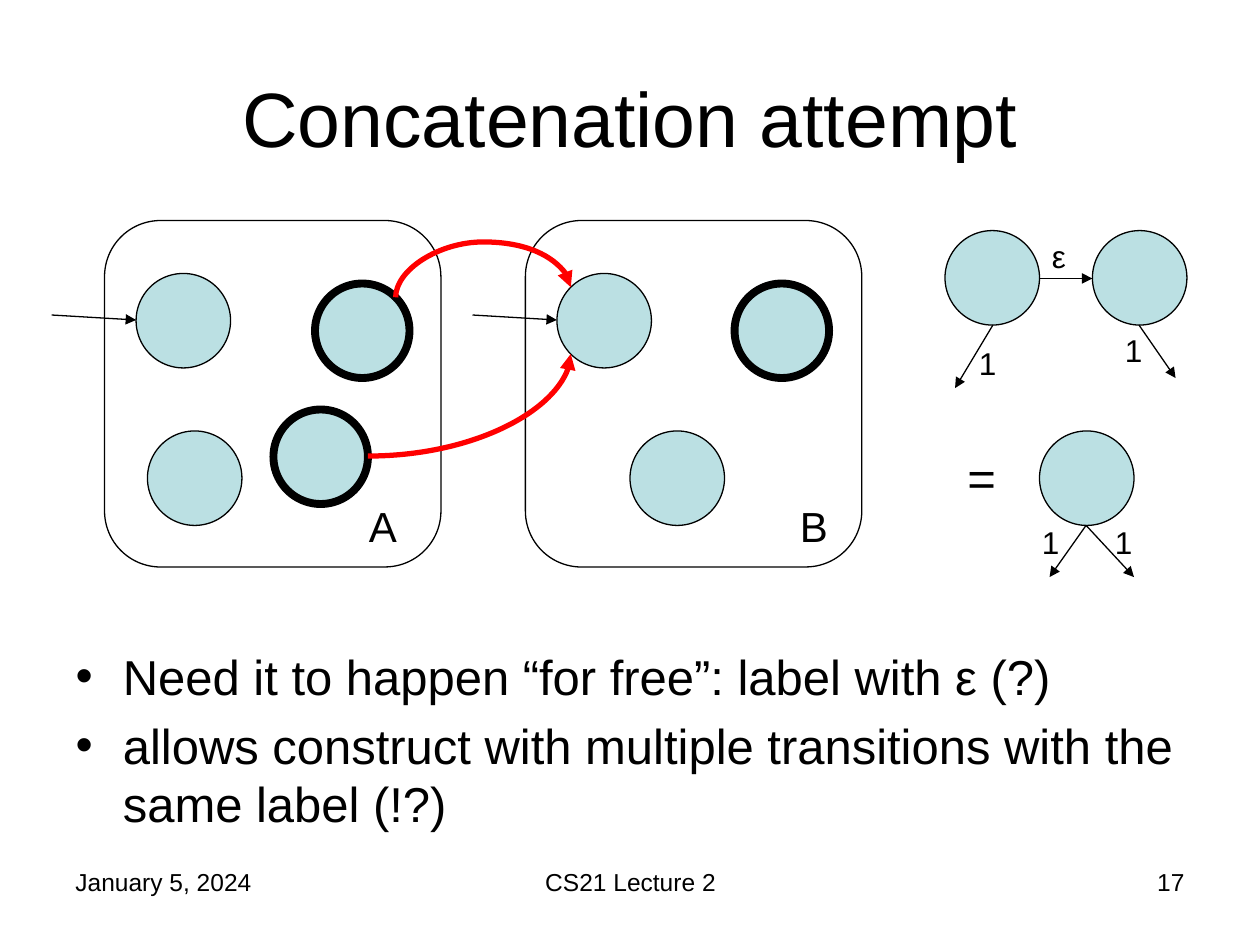
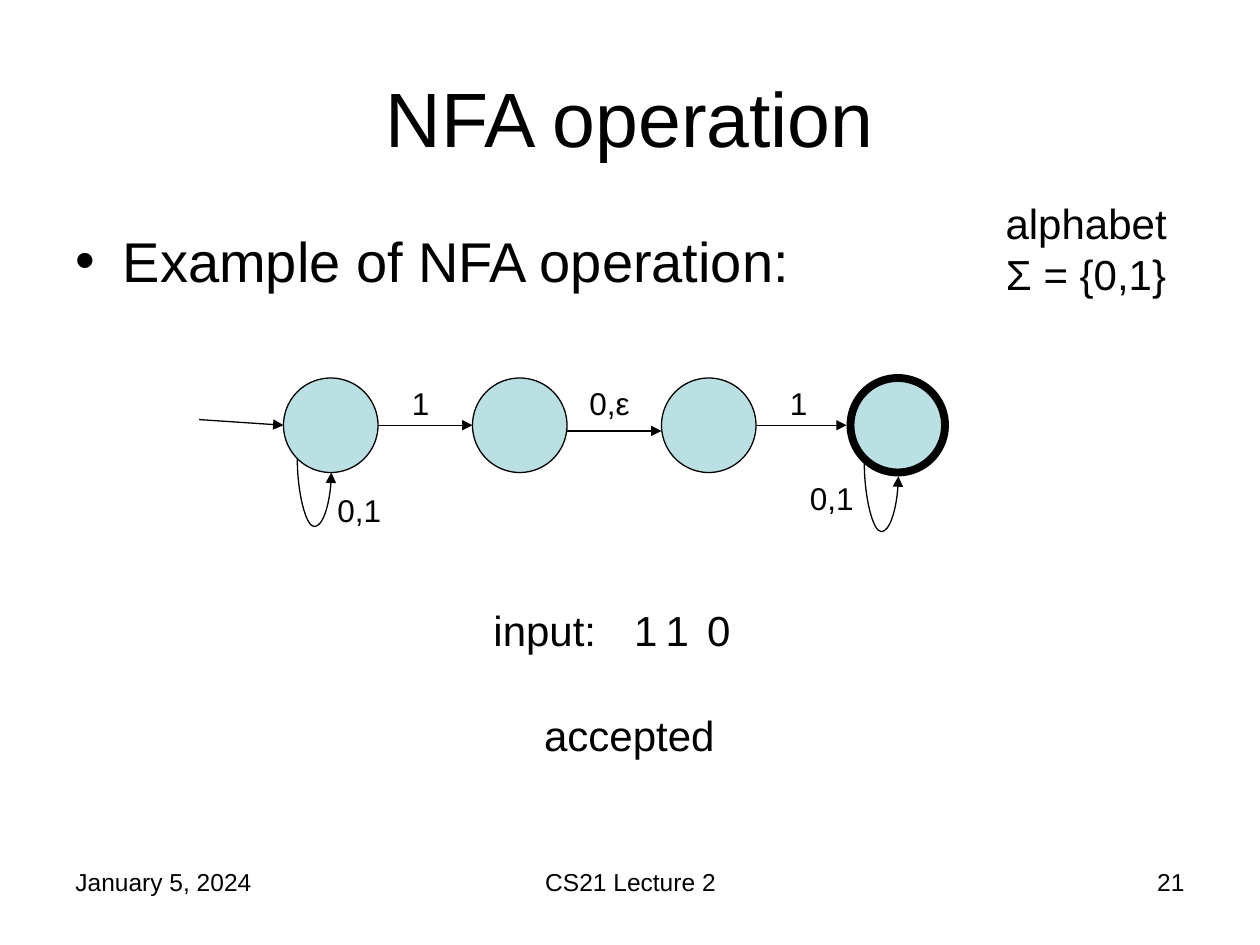
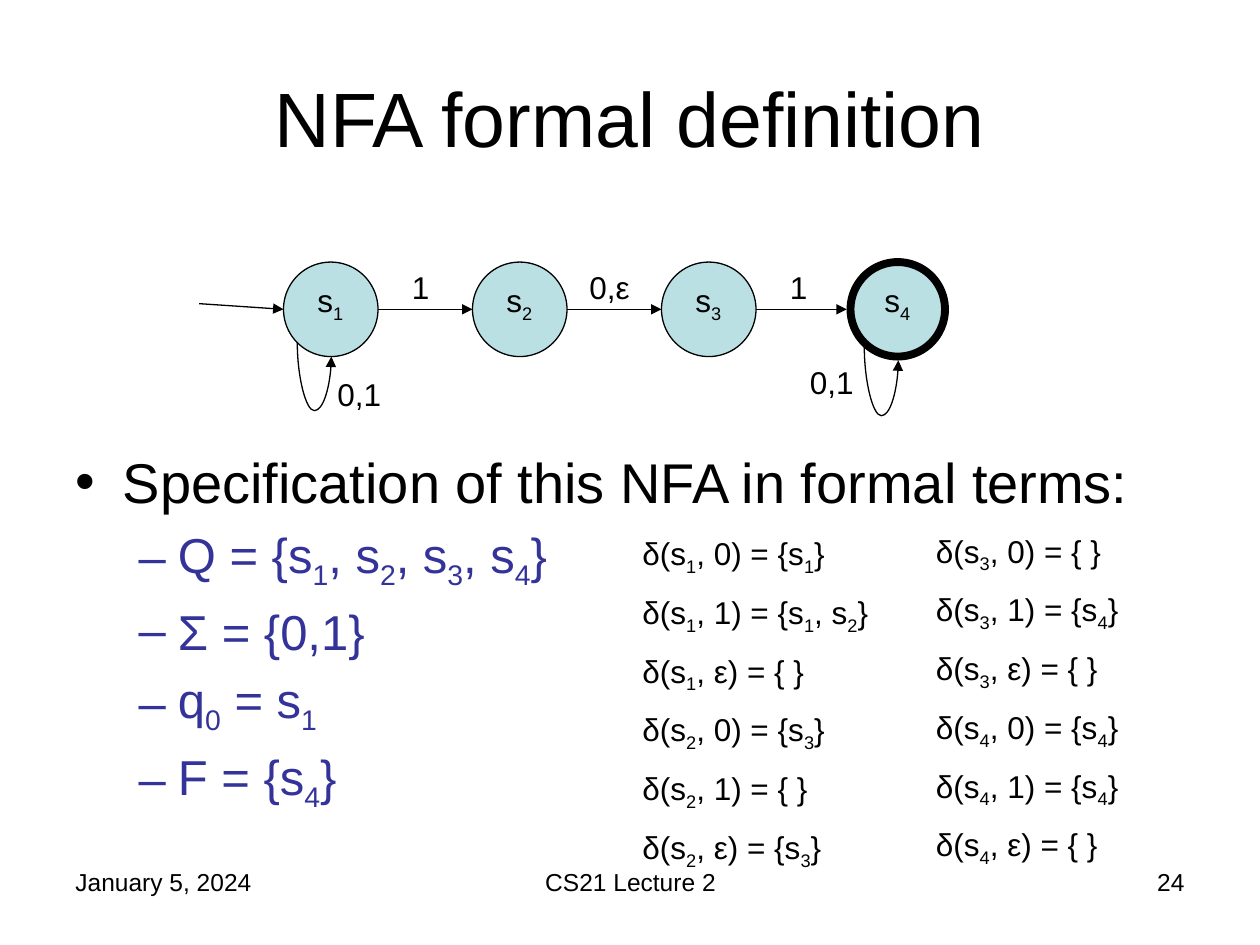
from lxml.etree import SubElement
from pptx import Presentation
from pptx.dml.color import RGBColor
from pptx.enum.shapes import MSO_CONNECTOR as CONN, MSO_SHAPE as SHAPE
from pptx.enum.text import MSO_ANCHOR as ANCHOR, MSO_AUTO_SIZE as FIT, PP_ALIGN as AL
from pptx.oxml.ns import qn
from pptx.util import Inches, Pt

BLACK = RGBColor(0x00, 0x00, 0x00)
STATE_FILL = RGBColor(0xBB, 0xE0, 0xE3)
RED = RGBColor(0xFF, 0x00, 0x00)
INDIGO = RGBColor(0x33, 0x33, 0x99)
FONT = "Arial"
D = 0.75  # state diameter
THIN, ACCEPT, BOLD = 0.75, 4.5, 3

# Content; "_" puts the next character in subscript
DATE, COURSE = "January 5, 2024", "CS21 Lecture 2"
CONCAT_POINTS = [
    (0, "Need it to happen “for free”: label with ε (?)"),
    (0, "allows construct with multiple transitions with the same label (!?)"),
]
OPERATION_POINTS = [(0, "Example of NFA operation:")]
FORMAL_POINTS = [
    (0, "Specification of this NFA in formal terms:"),
    (1, "Q = {s_1, s_2, s_3, s_4}"),
    (1, "Σ = {0,1}"),
    (1, "q_0 = s_1"),
    (1, "F = {s_4}"),
]
DELTA_LEFT = ["δ(s_1, 0) = {s_1}", "δ(s_1, 1) = {s_1, s_2}", "δ(s_1, ε) = { }",
              "δ(s_2, 0) = {s_3}", "δ(s_2, 1) = { }", "δ(s_2, ε) = {s_3}"]
DELTA_RIGHT = ["δ(s_3, 0) = { }", "δ(s_3, 1) = {s_4}", "δ(s_3, ε) = { }",
               "δ(s_4, 0) = {s_4}", "δ(s_4, 1) = {s_4}", "δ(s_4, ε) = { }"]
# Concatenation diagram: states as (x, y, line width), relative to nothing but the slide
BOXES = {  # left edge: name, name position, states
    4.17: ("B", 6.25, [(4.42, 2.17, THIN), (5.83, 2.25, ACCEPT), (5, 3.42, THIN)]),
    0.83: ("A", 2.83, [(1.08, 2.17, THIN), (2.5, 2.25, ACCEPT), (1.17, 3.42, THIN),
                       (2.17, 3.25, ACCEPT)]),
}
EQUATION_STATES = [(7.5, 1.83), (8.67, 1.83), (8.25, 3.42)]
EQUATION_ARROWS = [
    (8.25, 2.21, 8.67, 2.21), (7.88, 2.58, 7.58, 3.08), (9.04, 2.58, 9.33, 3),
    (8.62, 4.17, 8.33, 4.58), (8.62, 4.17, 9, 4.58),
]
EQUATION_LABELS = [("1", 7.67, 2.68), ("1", 8.83, 2.58), ("ε", 8.25, 1.83),
                   ("1", 8.17, 4.1), ("1", 8.75, 4.1)]
# Machine labels: text, x, offset below the top of the states, width
MACHINE_LABELS = [("1", 3.17, 0, 0.42), ("0,ε", 4.58, 0, 0.67), ("1", 6.17, 0, 0.42),
                  ("0,1", 2.58, 0.85, 0.67), ("0,1", 6.33, 0.75, 0.67)]
# Self-loops: start x, end x, then start, end and bend offsets
MACHINE_LOOPS = [(2.36, 2.63, 0.64, 0.75, 1.18), (6.86, 7.13, 0.67, 0.78, 1.22)]


# Text
def place(sp, left, top, width, height):
    sp.left, sp.top = Inches(left), Inches(top)
    sp.width, sp.height = Inches(width), Inches(height)


def add_run(p, text, size, color, subscript=False):
    r = p.add_run()
    r.text = text
    r.font.name, r.font.size = FONT, Pt(size)
    r.font.color.rgb = color
    if subscript:
        r.font._element.set("baseline", "-25000")


def add_runs(p, text, size, color=BLACK):
    head, *rest = text.split("_")
    add_run(p, head, size, color)
    for part in rest:
        add_run(p, part[0], size, color, subscript=True)
        if part[1:]:
            add_run(p, part[1:], size, color)


def paragraphs(tf, count):
    return [tf.paragraphs[0]] + [tf.add_paragraph() for _ in range(count - 1)]


def add_text(slide, lines, left, top, width, height=0.4, size=18, align=AL.LEFT, grow=True):
    tf = slide.shapes.add_textbox(*map(Inches, (left, top, width, height))).text_frame
    tf.word_wrap = True
    tf.auto_size = FIT.SHAPE_TO_FIT_TEXT if grow else FIT.NONE
    for p, line in zip(paragraphs(tf, len(lines)), lines):
        p.alignment = align
        if grow:
            before = SubElement(p._p.get_or_add_pPr(), qn("a:spcBef"))
            SubElement(before, qn("a:spcPct")).set("val", "50000")
        add_runs(p, line, size)


# Shapes and lines
def add_outline(slide, shape, left, top, width, height, weight, fill=None):
    sp = slide.shapes.add_shape(shape, *map(Inches, (left, top, width, height)))
    sp.shadow.inherit = False
    if fill is None:
        sp.fill.background()
    else:
        sp.fill.solid()
        sp.fill.fore_color.rgb = fill
    sp.line.color.rgb, sp.line.width = BLACK, Pt(weight)


def add_state(slide, x, y, weight=THIN):
    add_outline(slide, SHAPE.OVAL, x, y, D, D, weight, STATE_FILL)


def add_arrow(slide, x1, y1, x2, y2, color=BLACK, weight=THIN, kind=CONN.STRAIGHT):
    c = slide.shapes.add_connector(kind, *map(Inches, (x1, y1, x2, y2)))
    c.line.color.rgb, c.line.width = color, Pt(weight)
    SubElement(c.line._get_or_add_ln(), qn("a:tailEnd")).set("type", "triangle")
    SubElement(c._element.spPr, qn("a:effectLst"))
    return c


def add_quarter_curve(slide, *ends, **style):
    c = add_arrow(slide, *ends, kind=CONN.CURVE, **style)
    c._element.spPr.find(qn("a:prstGeom")).set("prst", "curvedConnector2")


def add_u_curve(slide, x1, y1, x2, y2, bend, **style):
    """Leave vertically, turn at height bend and come back to the end point."""
    c = add_arrow(slide, x1, y1, x2, y2, kind=CONN.CURVE, **style)
    w, h = abs(y2 - y1), abs(x2 - x1)  # the frame lies on its side
    place(c, (x1 + x2 - w) / 2, (y1 + y2 - h) / 2, w, h)
    down = y2 > y1
    xfrm = c._element.spPr.find(qn("a:xfrm"))
    xfrm.set("rot", str((270 if down else 90) * 60000))
    xfrm.set("flipH", "1")
    xfrm.set("flipV", "0" if down else "1")
    geom = c._element.spPr.find(qn("a:prstGeom"))
    guides = geom.find(qn("a:avLst"))
    if guides is None:
        guides = SubElement(geom, qn("a:avLst"))
    gd = SubElement(guides, qn("a:gd"))
    gd.set("name", "adj1")
    gd.set("fmla", f"val {round((bend - y1) / (y2 - y1) * 100000)}")


# Slide frame: title, list and footer
def new_slide(prs, title, number, points, body_box, sizes):
    slide = prs.slides.add_slide(prs.slide_layouts[1])
    sp = slide.shapes.title
    place(sp, 0.5, 0.3, 9, 1.25)
    tf = sp.text_frame
    tf.vertical_anchor, tf.auto_size = ANCHOR.MIDDLE, FIT.NONE
    tf.paragraphs[0].alignment = AL.CENTER
    add_runs(tf.paragraphs[0], title, 44)

    body = slide.placeholders[1]
    place(body, *body_box)
    tf = body.text_frame
    tf.auto_size = FIT.NONE
    for p, (level, text) in zip(paragraphs(tf, len(points)), points):
        p.level = level
        add_runs(p, text, sizes[level], INDIGO if level else BLACK)

    for text, left, width, align in ((DATE, 0.5, 2.33, AL.LEFT),
                                     (COURSE, 3.42, 3.17, AL.CENTER),
                                     (str(number), 7.17, 2.33, AL.RIGHT)):
        add_text(slide, [text], left, 6.83, width, 0.52, 14, align, grow=False)
    return slide


def add_machine(slide, top, middle_arrow):
    xs = [2.25 + 1.5 * i for i in range(4)]
    mid = top + D / 2
    for x in xs:
        add_state(slide, x, top, ACCEPT if x == xs[-1] else THIN)
    add_arrow(slide, 1.58, top + 0.33, xs[0], mid)
    add_arrow(slide, xs[0] + D, mid, xs[1], mid)
    add_arrow(slide, xs[1] + D, top + middle_arrow, xs[2], top + middle_arrow)
    add_arrow(slide, xs[2] + D, mid, xs[3] - 0.03, mid)
    for x1, x2, start, end, bend in MACHINE_LOOPS:
        add_u_curve(slide, x1, top + start, x2, top + end, top + bend)
    for text, x, dy, width in MACHINE_LABELS:
        add_text(slide, [text], x, top + dy, width)
    return xs


def concatenation(prs):
    slide = new_slide(prs, "Concatenation attempt", 17, CONCAT_POINTS,
                      (0.5, 5.08, 9, 1.62), (28,))
    # Two transitions with the same label
    for x, y in EQUATION_STATES:
        add_state(slide, x, y)
    for ends in EQUATION_ARROWS:
        add_arrow(slide, *ends)
    for text, x, y in EQUATION_LABELS:
        add_text(slide, [text], x, y, 0.42)
    add_text(slide, ["="], 7.58, 3.5, 0.5, 0.57, 28)
    # Machines A and B
    for left, (name, name_x, states) in BOXES.items():
        add_outline(slide, SHAPE.ROUNDED_RECTANGLE, left, 1.75, 2.67, 2.75, THIN)
        for state in states:
            add_state(slide, *state)
        add_arrow(slide, left - 0.42, 2.5, left + 0.25, 2.54)
        add_text(slide, [name], name_x, 3.92, 0.67, 0.5, 24)
    add_u_curve(slide, 3.14, 2.36, 4.53, 2.28, 1.92, color=RED, weight=BOLD)
    add_quarter_curve(slide, 2.92, 3.62, 4.53, 2.81, color=RED, weight=BOLD)


def operation(prs):
    slide = new_slide(prs, "NFA operation", 21, OPERATION_POINTS,
                      (0.5, 1.75, 9, 0.75), (32,))
    add_machine(slide, 3, 0.42)
    add_text(slide, ["alphabet Σ = {0,1}"], 7.83, 1.52, 1.58, 0.9, 24, AL.CENTER)
    add_text(slide, ["input:"], 3.5, 4.75, 1.33, 0.5, 24, AL.RIGHT)
    for symbol, x in (("1", 4.75), ("1", 5), ("0", 5.33)):
        add_text(slide, [symbol], x, 4.75, 0.75, 0.5, 24, AL.CENTER)
    add_text(slide, ["accepted"], 3.33, 5.58, 3.33, 0.5, 24, AL.CENTER)


def formal_definition(prs):
    slide = new_slide(prs, "NFA formal definition", 24, FORMAL_POINTS,
                      (0.5, 3.5, 9, 3.2), (32, 28))
    for i, x in enumerate(add_machine(slide, 2.08, D / 2), start=1):
        add_text(slide, [f"s_{i}"], x + 0.17, 2.18, 0.5)
    add_text(slide, DELTA_LEFT, 5, 4.19, 2.42, 2.66)
    add_text(slide, DELTA_RIGHT, 7.33, 4.17, 2.42, 2.66)


def main():
    prs = Presentation()
    prs.slide_width, prs.slide_height = Inches(10), Inches(7.5)
    concatenation(prs)
    operation(prs)
    formal_definition(prs)
    prs.save("out.pptx")


if __name__ == "__main__":
    main()
